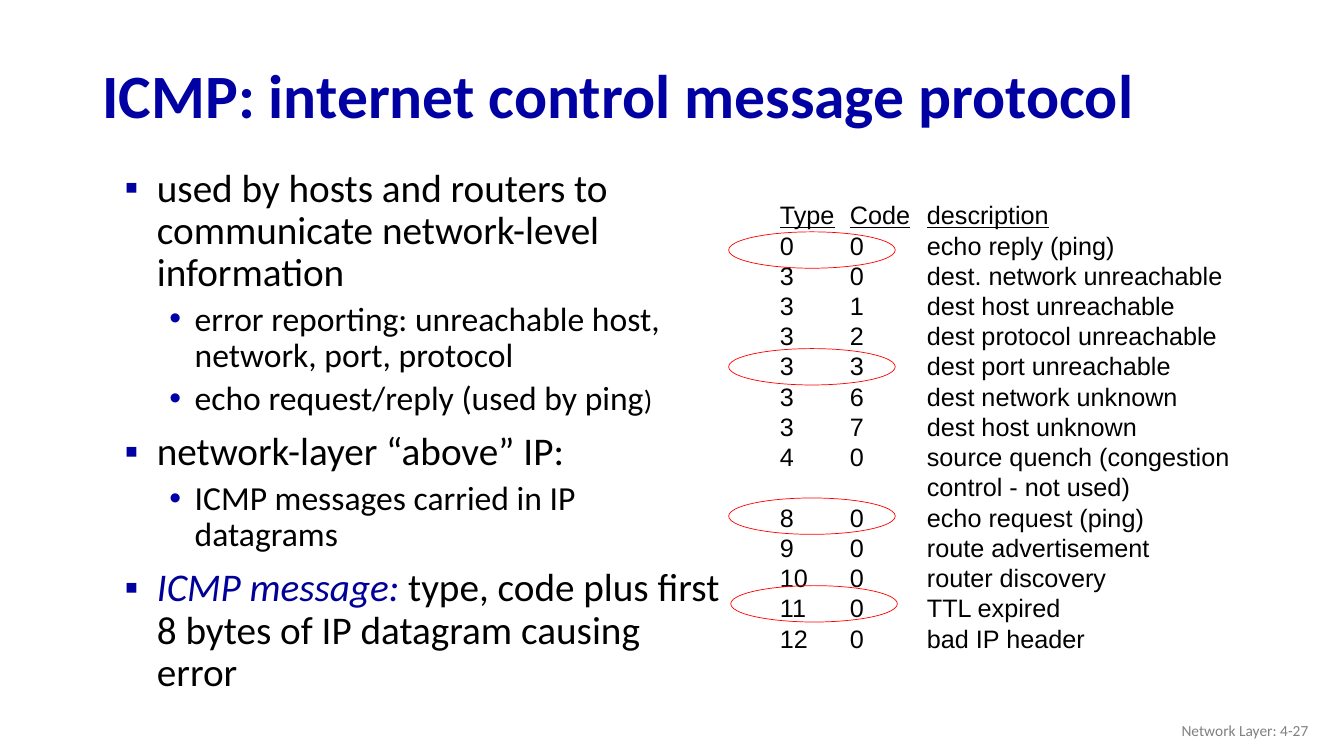
from pptx import Presentation
from pptx.util import Pt
from pptx.dml.color import RGBColor
from pptx.enum.shapes import MSO_SHAPE as Shape
from pptx.enum.text import PP_ALIGN as Align, MSO_ANCHOR as Anchor, MSO_AUTO_SIZE as Fit
from pptx.oxml.ns import qn
from lxml.etree import SubElement as Sub

# Content
TITLE = "ICMP: internet control message protocol"
FOOTER = "Network Layer: 4-27"
NAVY = RGBColor(0x00, 0x00, 0xA3)
INK = RGBColor(0x00, 0x00, 0x99)
BLUE = RGBColor(0x00, 0x00, 0xA8)
BLACK = RGBColor(0x00, 0x00, 0x00)
GRAY = RGBColor(0x80, 0x80, 0x80)
RED = RGBColor(0xFF, 0x00, 0x00)

# Each point: level, then its runs as (text, format)
POINTS = [
    (0, [("used by hosts and routers to communicate network-level information", {})]),
    (1, [("error reporting: unreachable host, network, port, protocol", {})]),
    (1, [("echo request/reply (used by ping", {}), (")", {"size": 20})]),
    (0, [("network-layer “above” IP:", {})]),
    (1, [("ICMP messages carried in IP datagrams", {})]),
    (0, [("ICMP message: ", {"color": INK, "italic": True}),
         ("type, code plus first 8 bytes of IP datagram causing error", {})]),
]
HEAD = ("Type", "Code", "description")
ROWS = [
    ("0", "0", "echo reply (ping)"),
    ("3", "0", "dest. network unreachable"),
    ("3", "1", "dest host unreachable"),
    ("3", "2", "dest protocol unreachable"),
    ("3", "3", "dest port unreachable"),
    ("3", "6", "dest network unknown"),
    ("3", "7", "dest host unknown"),
    ("4", "0", "source quench (congestion"),
    ("", "", "control - not used)"),
    ("8", "0", "echo request (ping)"),
    ("9", "0", "route advertisement"),
    ("10", "0", "router discovery"),
    ("11", "0", "TTL expired"),
    ("12", "0", "bad IP header"),
]
# Level format: size, indent, hang, space before, bullet, bullet colour
LEVELS = [(28, 28, 23, 10, "▪", NAVY), (24, 55, 18, 5, "•", BLUE)]
TABS = (50, 105)
RINGS = [(520.5, 165.6), (520.5, 249), (520.5, 355.7), (522, 418.3)]

deck = Presentation()
deck.slide_width, deck.slide_height = Pt(960), Pt(540)
slide = deck.slides.add_slide(deck.slide_layouts[5])


def write(para, text, size=18, font="Calibri", color=BLACK,
          bold=False, italic=False, under=False):
    run = para.add_run()
    run.text = text
    face = run.font
    face.name, face.size = font, Pt(size)
    face.bold, face.italic, face.underline = bold, italic, under
    face.color.rgb = color


def box(left, top, width, height):
    frame = slide.shapes.add_textbox(Pt(left), Pt(top), Pt(width), Pt(height)).text_frame
    frame.word_wrap = True
    return frame


def paras(frame, items):
    for i, item in enumerate(items):
        yield (frame.add_paragraph() if i else frame.paragraphs[0]), item


def bullet(para, level):
    size, left, hang, gap, mark, color = LEVELS[level]
    para.level = level
    para.line_spacing, para.space_before = 0.9, Pt(gap)
    props = para._p.get_or_add_pPr()
    props.set("marL", str(Pt(left)))
    props.set("indent", str(-Pt(hang)))
    Sub(Sub(props, qn("a:buClr")), qn("a:srgbClr"), val=str(color))
    Sub(props, qn("a:buFont"), typeface="Arial")
    Sub(props, qn("a:buChar"), char=mark)


# Title
title = slide.shapes.title
title.left, title.top, title.width, title.height = Pt(66), Pt(35.3), Pt(828), Pt(70.5)
frame = title.text_frame
frame.auto_size, frame.vertical_anchor = Fit.NONE, Anchor.MIDDLE
para = frame.paragraphs[0]
para.alignment, para.line_spacing = Align.LEFT, 0.9
write(para, TITLE, size=44, color=NAVY, bold=True)

# Bullet points
for para, (level, runs) in paras(box(77, 116.6, 444, 389.5), POINTS):
    bullet(para, level)
    for text, form in runs:
        write(para, text, **{"size": LEVELS[level][0], **form})

# List of ICMP types, in columns set by tab stops
for para, row in paras(box(550, 139, 345, 353.5), [HEAD, *ROWS]):
    stops = Sub(para._p.get_or_add_pPr(), qn("a:tabLst"))
    for stop in TABS:
        Sub(stops, qn("a:tab"), pos=str(Pt(stop)), algn="l")
    for col, text in enumerate(row):
        if col:
            write(para, "\t", font="Arial")
        if text:
            write(para, text, font="Arial", under=row is HEAD)

# Rings around the types in use
for left, top in RINGS:
    ring = slide.shapes.add_shape(Shape.OVAL, Pt(left), Pt(top), Pt(119), Pt(26))
    ring.shadow.inherit = False
    ring.fill.background()
    ring.line.color.rgb, ring.line.width = RED, Pt(0.5)

# Footer
frame = box(725.8, 507.6, 216, 28.8)
frame.vertical_anchor = Anchor.MIDDLE
frame.paragraphs[0].alignment = Align.RIGHT
write(frame.paragraphs[0], FOOTER, size=11, color=GRAY)

deck.save("out.pptx")
